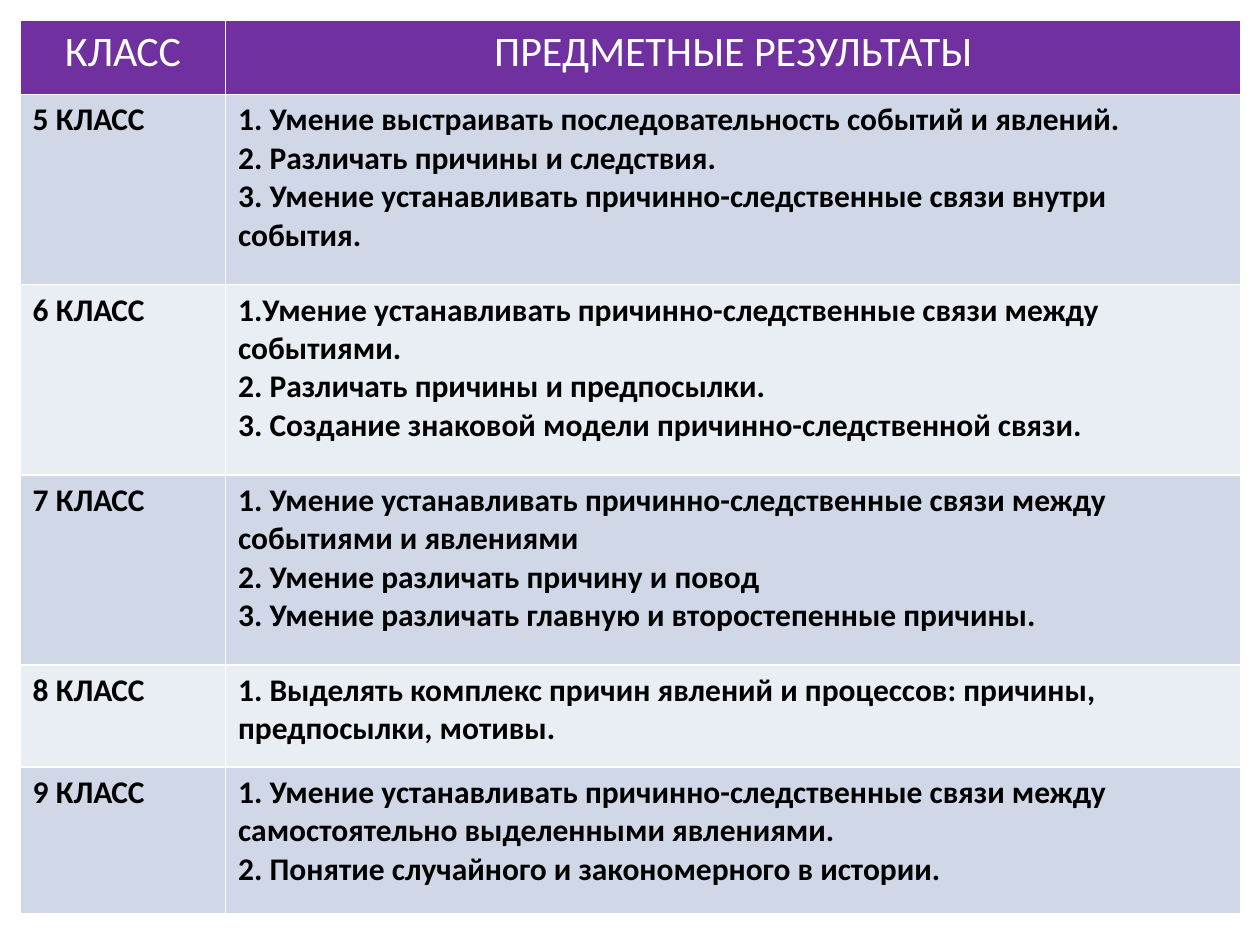
from pptx import Presentation
from pptx.dml.color import RGBColor
from pptx.enum.text import PP_ALIGN
from pptx.util import Inches, Pt

HEAD = ("КЛАСС", "ПРЕДМЕТНЫЕ РЕЗУЛЬТАТЫ")
# class, row height, results
GRADES = [
    ("5 КЛАСС", 1.51, [
        "1. Умение выстраивать последовательность событий и явлений.",
        "2. Различать причины и следствия.",
        "3. Умение устанавливать причинно-следственные связи внутри события.",
    ]),
    ("6 КЛАСС", 1.51, [
        "1.Умение устанавливать причинно-следственные связи между событиями.",
        "2. Различать причины и предпосылки.",
        "3. Создание знаковой модели причинно-следственной связи.",
    ]),
    ("7 КЛАСС", 1.51, [
        "1. Умение устанавливать причинно-следственные связи между событиями и явлениями",
        "2. Умение различать причину и повод",
        "3. Умение различать главную и второстепенные причины.",
    ]),
    ("8 КЛАСС", 0.81, [
        "1. Выделять комплекс причин явлений и процессов: причины, предпосылки, мотивы.",
    ]),
    ("9 КЛАСС", 1.16, [
        "1. Умение устанавливать причинно-следственные связи между "
        "самостоятельно выделенными явлениями.",
        "2. Понятие случайного и закономерного в истории.",
    ]),
]
WIDTHS = (1.63, 8.06)
HEAD_HIGH = 0.59
EDGE = 0.16
PURPLE, WHITE, BLACK = "7030A0", "FFFFFF", "000000"
BANDS = ("D0D8E8", "E9EDF4")


def color(code):
    return RGBColor.from_string(code)


def write(cell, lines, fill, ink, size, bold, align):
    cell.fill.solid()
    cell.fill.fore_color.rgb = color(fill)
    frame = cell.text_frame
    for i, line in enumerate(lines):
        para = frame.add_paragraph() if i else frame.paragraphs[0]
        para.alignment = align
        run = para.add_run()
        run.text = line
        font = run.font
        font.name, font.size, font.bold = "Calibri", Pt(size), bold
        font.color.rgb = color(ink)


def main():
    deck = Presentation()
    deck.slide_width, deck.slide_height = Inches(10), Inches(7.5)
    slide = deck.slides.add_slide(deck.slide_layouts[6])

    highs = [HEAD_HIGH] + [high for _, high, _ in GRADES]
    table = slide.shapes.add_table(
        len(highs), len(WIDTHS), Inches(EDGE), Inches(EDGE),
        Inches(sum(WIDTHS)), Inches(sum(highs))).table
    for col, wide in zip(table.columns, WIDTHS):
        col.width = Inches(wide)
    for row, high in zip(table.rows, highs):
        row.height = Inches(high)

    for c, label in enumerate(HEAD):
        write(table.cell(0, c), [label], PURPLE, WHITE, 24, False, PP_ALIGN.CENTER)
    for r, (grade, _, results) in enumerate(GRADES):
        for c, lines in enumerate(([grade], results)):
            write(table.cell(r + 1, c), lines, BANDS[r % 2], BLACK, 18, True,
                  PP_ALIGN.LEFT)

    deck.save("out.pptx")


if __name__ == "__main__":
    main()
